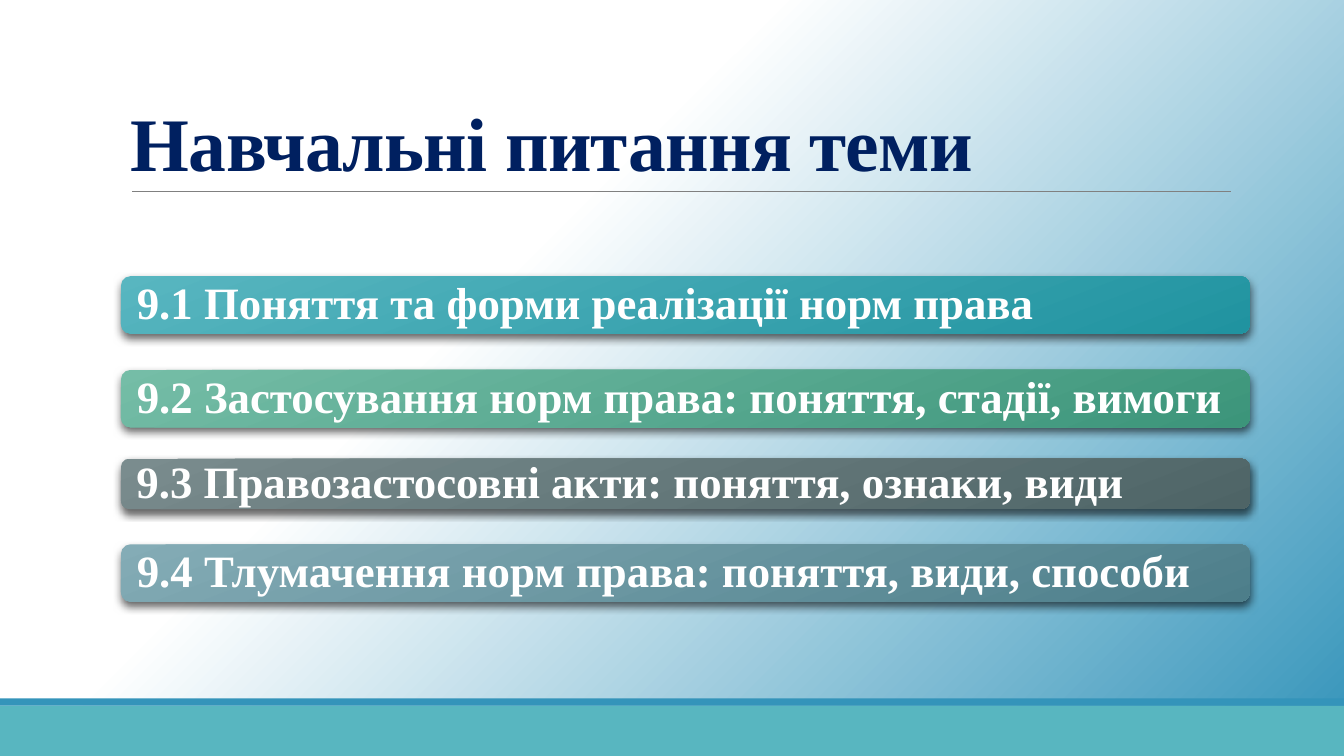
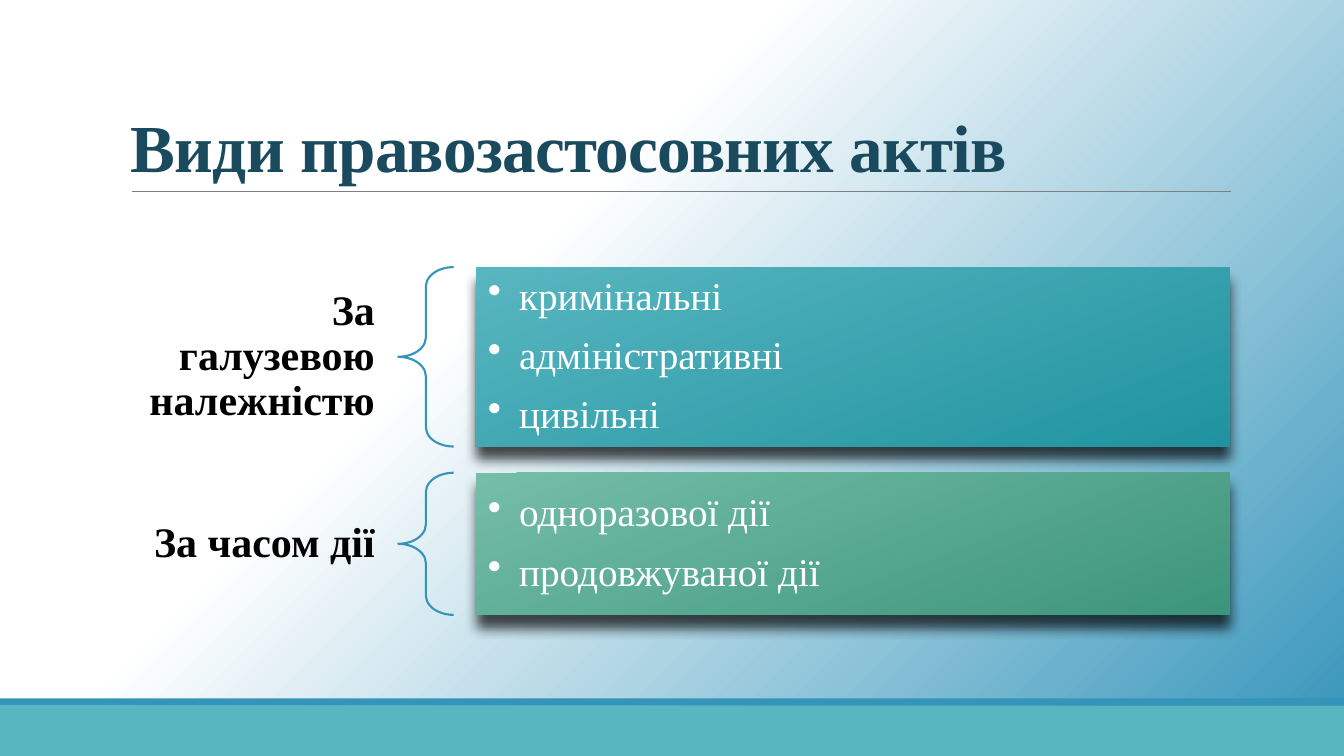
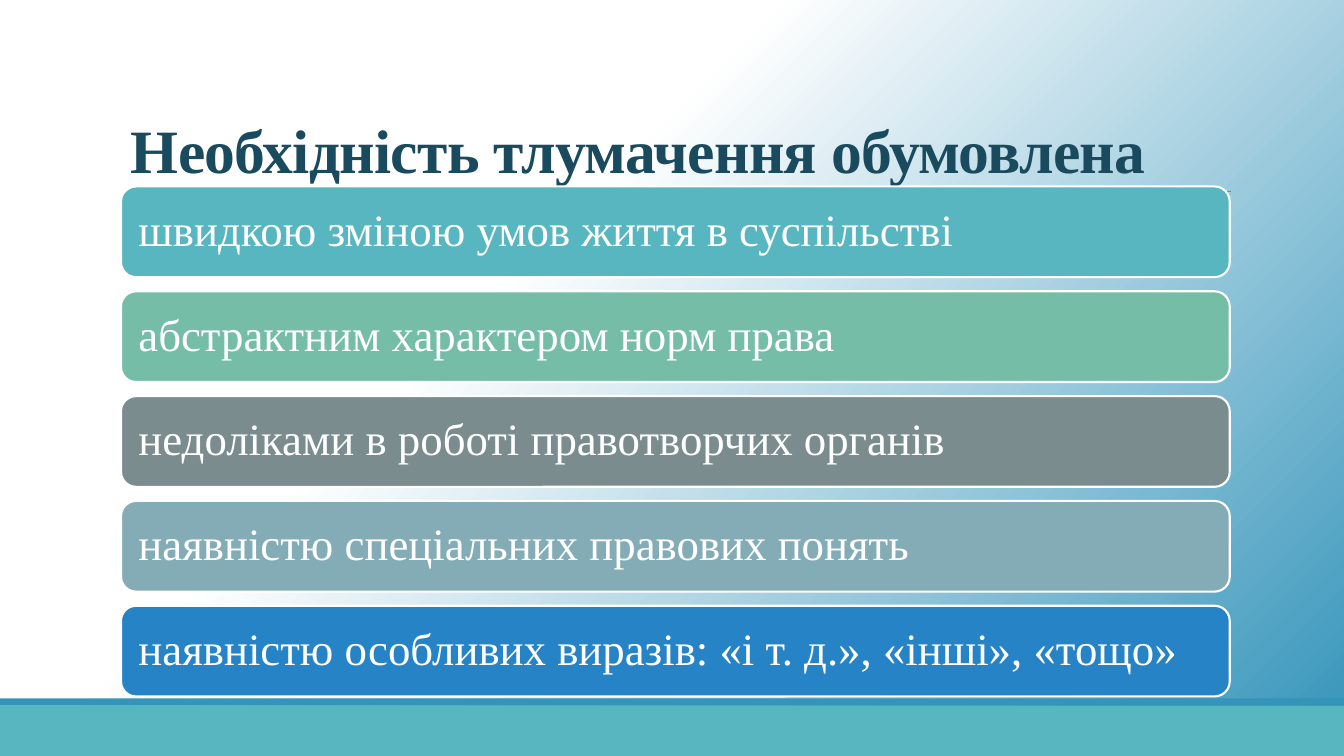
import lxml.etree
import pptx
import pptx.util
import pptx.dml.color
import pptx.enum.shapes
import pptx.enum.text
import pptx.oxml.ns

SHAPE = pptx.enum.shapes.MSO_SHAPE
ANCHOR = pptx.enum.text.MSO_ANCHOR
ALIGN = pptx.enum.text.PP_ALIGN
qn = pptx.oxml.ns.qn
FONT = "Times New Roman"
TEAL, GREEN, GREY, STEEL, BLUE = "58B6C0", "75BDA7", "7A8C8E", "84ACB6", "2683C6"
ACCENT, WHITE, NAVY, DARK = "3494BA", "FFFFFF", "002060", "1A4A5D"
DEEP = {TEAL: "2093A0", GREEN: "3C957A", GREY: "4E6466", STEEL: "4D7E8A"}

deck = pptx.Presentation()
deck.slide_width = pptx.util.Inches(13.33)
deck.slide_height = pptx.util.Inches(7.5)
COLUMNS, ROWS = 160, 90
column = deck.slide_width / COLUMNS
row = deck.slide_height / ROWS
MARGIN, CONTENT = 14.4, 132


def paint(fill, *colours, angle=69, start=0):
    if not colours:
        fill.background()
    elif len(colours) == 1:
        fill.solid()
        fill.fore_color.rgb = pptx.dml.color.RGBColor.from_string(colours[0])
    else:
        fill.gradient()
        fill.gradient_angle = 360 - angle
        for stop, colour, position in zip(fill.gradient_stops, colours, (start, 1)):
            stop.color.rgb = pptx.dml.color.RGBColor.from_string(colour)
            stop.position = position


def block(slide, kind, place, colours=(), outline=(), shadow=None, texts=(), size=32,
          ink=WHITE, bold=False, spacing=0.9, tracking=0, inset=(0.13, 0.13),
          anchor=ANCHOR.MIDDLE, align=ALIGN.LEFT, bullets=False):
    left, top, width, height = place
    box = [round(n) for n in (left * column, top * row, width * column, height * row)]
    if kind is None:
        shape = slide.shapes.add_textbox(*box)
    else:
        shape = slide.shapes.add_shape(kind, *box)
        paint(shape.fill, *colours)
        paint(shape.line.fill, *outline)
        if outline:
            shape.line.width = pptx.util.Pt(1.5)
        shape.shadow.inherit = False
    if shadow:
        blur, distance, opacity = shadow
        effects = shape.element.spPr.find(qn("a:effectLst"))
        outer = lxml.etree.SubElement(
            effects, qn("a:outerShdw"), blurRad=str(pptx.util.Pt(blur)),
            dist=str(pptx.util.Pt(distance)), dir="5400000", algn="ctr", rotWithShape="0")
        tone = lxml.etree.SubElement(outer, qn("a:srgbClr"), val="000000")
        lxml.etree.SubElement(tone, qn("a:alpha"), val=str(opacity * 1000))
    frame = shape.text_frame
    frame.word_wrap = True
    frame.vertical_anchor = anchor
    frame.margin_left = frame.margin_right = pptx.util.Inches(inset[0])
    frame.margin_top = frame.margin_bottom = pptx.util.Inches(inset[1])
    for index, text in enumerate(texts):
        paragraph = frame.add_paragraph() if index else frame.paragraphs[0]
        paragraph.alignment = align
        paragraph.line_spacing = spacing
        if bullets:
            paragraph.space_after = pptx.util.Pt(12)
            properties = paragraph._p.get_or_add_pPr()
            indent = pptx.util.Inches(0.31)
            properties.set("marL", str(indent))
            properties.set("indent", str(-indent))
            lxml.etree.SubElement(properties, qn("a:buChar"), char="•")
        run = paragraph.add_run()
        run.text = text
        run.font.name = FONT
        run.font.size = pptx.util.Pt(size)
        run.font.bold = bold
        paint(run.font.fill, ink)
        if tracking:
            run._r.get_or_add_rPr().set("spc", str(round(tracking * 100)))
    return shape


titles = [
    ("Навчальні питання теми", 54, NAVY),
    ("Види правозастосовних актів", 48, DARK),
    ("Необхідність тлумачення обумовлена", 44, DARK),
]
slides = []
for title, title_size, title_ink in titles:
    slide = deck.slides.add_slide(deck.slide_layouts[6])
    paint(slide.background.fill, WHITE, ACCENT, angle=45, start=0.37)
    block(slide, SHAPE.RECTANGLE, (0, 84, COLUMNS, 6), [TEAL])
    block(slide, SHAPE.RECTANGLE, (0, 83.16, COLUMNS, 0.84), [ACCENT])
    rule_y = round(22.8 * row)
    rule = slide.shapes.add_connector(
        pptx.enum.shapes.MSO_CONNECTOR.STRAIGHT,
        round(15.72 * column), rule_y, round(146.52 * column), rule_y)
    paint(rule.line.fill, "808080")
    rule.line.width = pptx.util.Pt(0.5)
    lxml.etree.SubElement(rule.element.spPr, qn("a:effectLst"))
    block(slide, None, (MARGIN, 3.72, CONTENT, 19.08), texts=[title], size=title_size,
          ink=title_ink, bold=True, spacing=0.85, tracking=-0.5, inset=(0.1, 0.05),
          anchor=ANCHOR.BOTTOM)
    slides.append(slide)
questions_slide, acts_slide, reasons_slide = slides

questions = [
    ("9.1 Поняття та форми реалізації норм права", TEAL, 32.88, 6.84),
    ("9.2 Застосування норм права: поняття, стадії, вимоги", GREEN, 44.04, 6.84),
    ("9.3 Правозастосовні акти: поняття, ознаки, види", GREY, 54.6, 6),
    ("9.4 Тлумачення норм права: поняття, види, способи", STEEL, 64.8, 6.84),
]
for question, colour, top, height in questions:
    block(questions_slide, SHAPE.ROUNDED_RECTANGLE, (MARGIN, top, 134.4, height),
          [colour, DEEP[colour]], shadow=(6, 3, 60), texts=[question], bold=True)

act_groups = [
    ("За галузевою належністю", ["кримінальні", "адміністративні", "цивільні"], TEAL, 21.36),
    ("За часом дії", ["одноразової дії", "продовжуваної дії"], GREEN, 16.92),
]
top = 31.8
for criterion, acts, colour, height in act_groups:
    block(acts_slide, None, (MARGIN, top, 33, height), texts=[criterion], size=30,
          ink="000000", bold=True, inset=(0.23, 0.08), align=ALIGN.RIGHT)
    brace = block(acts_slide, SHAPE.LEFT_BRACE, (47.4, top, 6.6, height), outline=[ACCENT])
    brace.adjustments[0] = 0.35
    block(acts_slide, SHAPE.RECTANGLE, (56.64, top, 89.76, height), [colour, DEEP[colour]],
          shadow=(9, 9, 70), texts=acts, size=28, inset=(0.12, 0.12), bullets=True)
    top += height + 3.12

reasons = [
    ("швидкою зміною умов життя в суспільстві", TEAL),
    ("абстрактним характером норм права", GREEN),
    ("недоліками в роботі правотворчих органів", GREY),
    ("наявністю спеціальних правових понять", STEEL),
    ("наявністю особливих виразів: «і т. д.», «інші», «тощо»", BLUE),
]
for index, (reason, colour) in enumerate(reasons):
    block(reasons_slide, SHAPE.ROUNDED_RECTANGLE,
          (MARGIN, 22.2 + index * 12.48, CONTENT, 10.8), [colour], [WHITE], texts=[reason])

deck.save("out.pptx")
